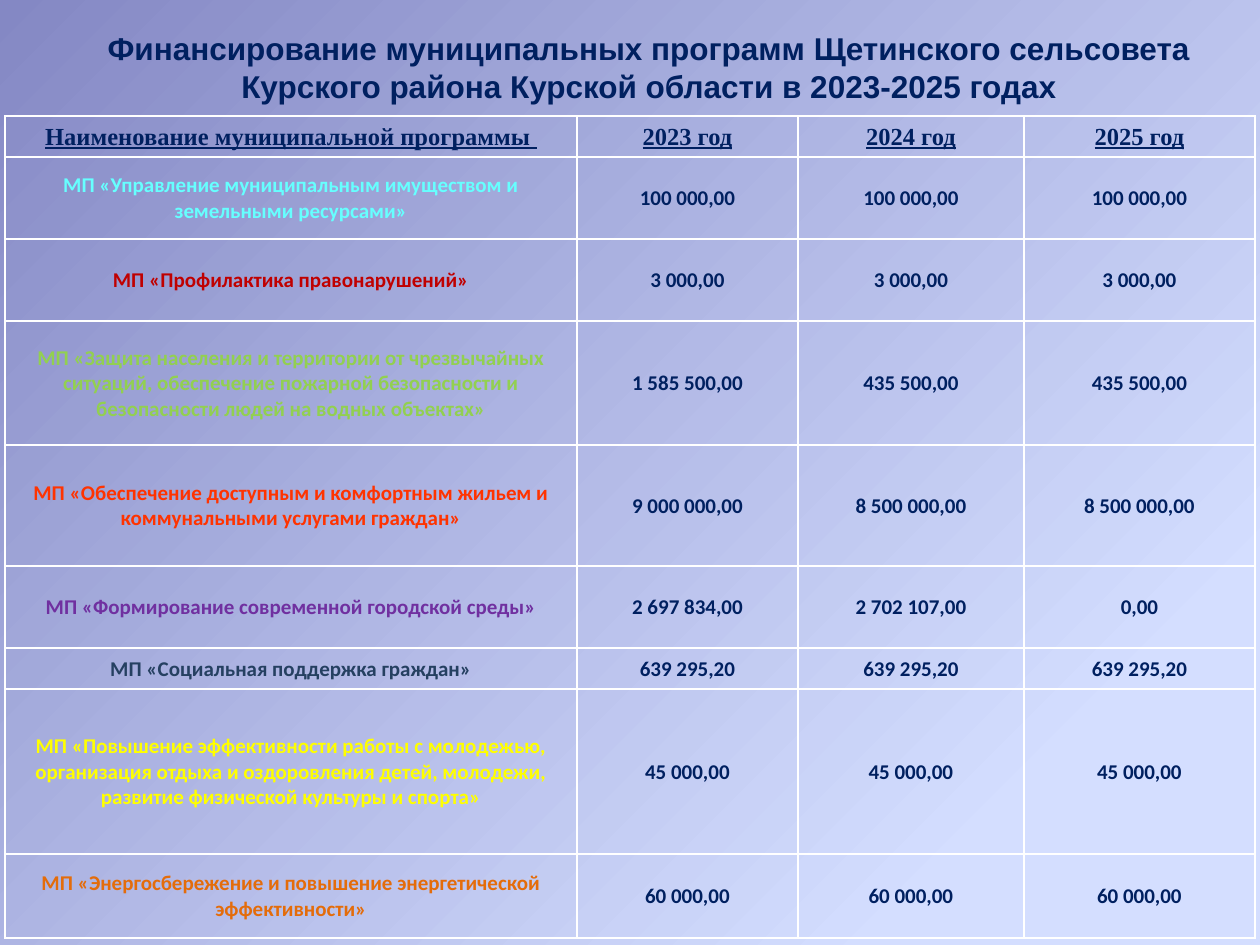
from lxml import etree
from pptx import Presentation
from pptx.dml.color import RGBColor
from pptx.enum.text import MSO_ANCHOR, MSO_AUTO_SIZE, PP_ALIGN
from pptx.oxml.ns import qn
from pptx.util import Emu, Pt

CENTER = PP_ALIGN.CENTER
TOP, MIDDLE = MSO_ANCHOR.TOP, MSO_ANCHOR.MIDDLE
NO_AUTOFIT = MSO_AUTO_SIZE.NONE

PX_PER_INCH = 126
COLORS = {
    "navy": "002060", "border": "FFFFFF",
    "bg_dark": "8488C4", "bg_light": "D4DEFF",
    "aqua": "66FFFF", "crimson": "C00000", "green": "92D050",
    "vermilion": "FF3300", "purple": "7030A0", "slate": "254061",
    "yellow": "FFFF00", "orange": "E46C0A",
}

TITLE = ("Финансирование муниципальных программ Щетинского сельсовета "
         "Курского района Курской области в 2023-2025 годах")
HEADER = ["Наименование муниципальной программы ", "2023 год", "2024 год", "2025 год"]
# Program name, its color, row height, amounts by year
PROGRAMS = [
    ("МП «Управление муниципальным имуществом и земельными ресурсами»",
     "aqua", 82, ["100 000,00", "100 000,00", "100 000,00"]),
    ("МП «Профилактика правонарушений»",
     "crimson", 82, ["3 000,00", "3 000,00", "3 000,00"]),
    ("МП «Защита населения и территории от чрезвычайных ситуаций, обеспечение "
     "пожарной безопасности и безопасности людей на водных объектах»",
     "green", 124, ["1 585 500,00", "435 500,00", "435 500,00"]),
    ("МП «Обеспечение доступным и комфортным жильем и коммунальными услугами граждан»",
     "vermilion", 121, ["9 000 000,00", "8 500 000,00", "8 500 000,00"]),
    ("МП «Формирование современной городской среды»",
     "purple", 82, ["2 697 834,00", "2 702 107,00", "0,00"]),
    ("МП «Социальная поддержка граждан»",
     "slate", 41, ["639 295,20", "639 295,20", "639 295,20"]),
    ("МП «Повышение эффективности работы с молодежью, организация отдыха и "
     "оздоровления детей, молодежи, развитие физической культуры и спорта»",
     "yellow", 165, ["45 000,00", "45 000,00", "45 000,00"]),
    ("МП «Энергосбережение и повышение энергетической эффективности»",
     "orange", 84, ["60 000,00", "60 000,00", "60 000,00"]),
]
HEADER_HEIGHT = 41
COLUMN_WIDTHS = [572, 221, 226, 231]


def px(length):
    return Emu(round(length * 914400 / PX_PER_INCH))


def rgb(name):
    return RGBColor.from_string(COLORS[name])


def write_text(frame, text, *, size, font, color="navy", underline=False):
    """Write one bold, centered paragraph."""
    paragraph = frame.paragraphs[0]
    paragraph.alignment = CENTER
    run = paragraph.add_run()
    run.text = text
    run.font.size = Pt(size)
    run.font.name = font
    run.font.bold = True
    run.font.underline = underline
    run.font.color.rgb = rgb(color)


def set_borders(cell):
    properties = cell._tc.get_or_add_tcPr()
    for position, side in enumerate(("a:lnL", "a:lnR", "a:lnT", "a:lnB")):
        line = etree.Element(qn(side), w=str(Pt(1)))
        fill = etree.SubElement(line, qn("a:solidFill"))
        etree.SubElement(fill, qn("a:srgbClr"), val=COLORS["border"])
        properties.insert(position, line)


def paint_background(slide):
    fill = slide.background.fill
    fill.gradient()
    fill.gradient_angle = 315
    for stop, color, position in zip(fill.gradient_stops, ("bg_dark", "bg_light"), (0, 0.83)):
        stop.color.rgb = rgb(color)
        stop.position = position


def place_title(slide, left, top, width, height):
    title = slide.shapes.title
    title.left, title.top = px(left), px(top)
    title.width, title.height = px(width), px(height)
    frame = title.text_frame
    frame.auto_size = NO_AUTOFIT
    frame.word_wrap = True
    frame.vertical_anchor = TOP
    frame.margin_top = px(3)
    write_text(frame, TITLE, size=18, font="Arial")


def fill_cell(cell, text, **text_format):
    cell.fill.background()
    set_borders(cell)
    cell.vertical_anchor = MIDDLE
    cell.margin_left = cell.margin_right = cell.margin_top = px(1)
    cell.margin_bottom = 0
    write_text(cell.text_frame, text, **text_format)


def place_funding_table(slide, left, top):
    row_heights = [HEADER_HEIGHT] + [height for _, _, height, _ in PROGRAMS]
    funding = slide.shapes.add_table(
        len(row_heights), len(COLUMN_WIDTHS), px(left), px(top),
        px(sum(COLUMN_WIDTHS)), px(sum(row_heights))).table
    funding.first_row = funding.horz_banding = False
    for column, width in zip(funding.columns, COLUMN_WIDTHS):
        column.width = px(width)
    for row, height in zip(funding.rows, row_heights):
        row.height = px(height)

    # Header row
    for column, heading in enumerate(HEADER):
        fill_cell(funding.cell(0, column), heading,
                  size=14, font="Times New Roman", underline=True)

    # One row for each program
    for row, (program, color, _, amounts) in enumerate(PROGRAMS, start=1):
        fill_cell(funding.cell(row, 0), program, size=12, font="Calibri", color=color)
        for column, amount in enumerate(amounts, start=1):
            fill_cell(funding.cell(row, column), amount, size=12, font="Calibri")


def main():
    deck = Presentation()
    deck.slide_width, deck.slide_height = px(1260), px(945)
    title_only = deck.slide_layouts[5]
    slide = deck.slides.add_slide(title_only)
    paint_background(slide)
    place_title(slide, 63, 26, 1172, 118)
    place_funding_table(slide, 5, 116)
    deck.save("out.pptx")


if __name__ == "__main__":
    main()
